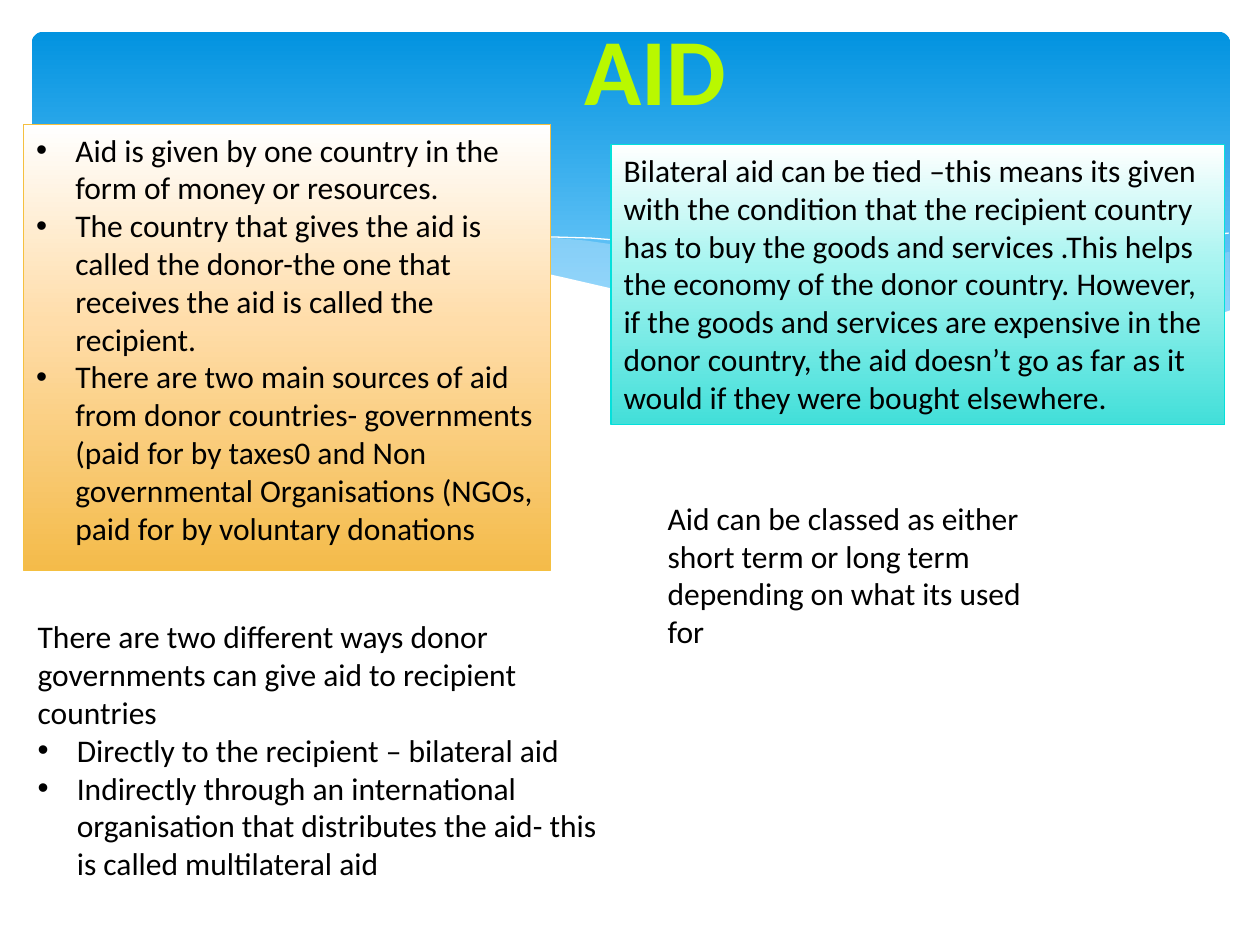
from pptx import Presentation
from pptx.dml.color import RGBColor
from pptx.enum.shapes import MSO_SHAPE
from pptx.enum.text import MSO_ANCHOR, PP_ALIGN
from pptx.oxml.ns import qn
from pptx.util import Cm, Pt
from lxml.etree import SubElement

BLACK = RGBColor(0x00, 0x00, 0x00)
WHITE = RGBColor(0xFF, 0xFF, 0xFF)
SKY = RGBColor(0x02, 0x93, 0xE0)
PALE = RGBColor(0x83, 0xD3, 0xFE)
MIST = RGBColor(0xC6, 0xE7, 0xFC)
PEACH = RGBColor(0xFF, 0xDD, 0xAA)
AMBER = RGBColor(0xF4, 0xBB, 0x4A)
GOLD = RGBColor(0xF5, 0xC0, 0x40)
MINT = RGBColor(0xA5, 0xF4, 0xF0)
AQUA = RGBColor(0x42, 0xDF, 0xD9)
TEAL = RGBColor(0x05, 0xE0, 0xDB)
MOSS = RGBColor(0x5C, 0x7B, 0x00)
LIME = RGBColor(0xB9, 0xF8, 0x00)
LEAF = RGBColor(0xAC, 0xE7, 0x00)
EDGE = RGBColor(0x80, 0xA6, 0x11)


def blend(fill, owner, stops):
    """Fill from top to bottom with (percent, colour) stops."""
    fill.gradient()
    fill.gradient_angle = 270
    row = owner.find(qn("a:gradFill")).find(qn("a:gsLst"))
    for stop in list(row):
        row.remove(stop)
    for part, tone in stops:
        stop = SubElement(row, qn("a:gs"), pos=str(part * 1000))
        SubElement(stop, qn("a:srgbClr"), val=str(tone))


def write(shape, lines, dots):
    """Write 18 pt lines; those from index dots on get bullets."""
    frame = shape.text_frame
    frame.word_wrap = True
    frame.vertical_anchor = MSO_ANCHOR.TOP
    frame.text = "\n".join(lines)
    for i, para in enumerate(frame.paragraphs):
        para.alignment = PP_ALIGN.LEFT
        font = para.runs[0].font
        font.name, font.size = "Calibri", Pt(18)
        font.color.rgb = BLACK
        if i >= dots:
            props = para._p.get_or_add_pPr()
            props.set("marL", str(Cm(0.79)))
            props.set("indent", str(-Cm(0.79)))
            SubElement(props, qn("a:buFont"), typeface="Arial")
            SubElement(props, qn("a:buChar"), char="•")


deck = Presentation()
deck.slide_width, deck.slide_height = Cm(25.4), Cm(19.05)
slide = deck.slides.add_slide(deck.slide_layouts[6])
shapes = slide.shapes

# Blue banner
banner = shapes.add_shape(MSO_SHAPE.ROUNDED_RECTANGLE,
                          Cm(0.64), Cm(0.64), Cm(24.16), Cm(6.86))
banner.adjustments[0] = 0.034
banner.shadow.inherit = False
banner.line.fill.background()
blend(banner.fill, banner._element.spPr, [(0, SKY), (90, PALE)])

# Waves in hundredths of a centimetre: fill, opacity, points
waves = [
    (MIST, 29, [
        (2477, 508), (2375, 526), (2187, 566), (1979, 615), (1793, 653),
        (1679, 673), (1791, 688), (1923, 701), (2068, 706), (2215, 696),
        (2339, 673), (2410, 653), (2479, 627), (2479, 508)]),
    (MIST, 40, [
        (2268, 693), (2126, 673), (1969, 645), (1793, 610), (1598, 564),
        (1445, 528), (1306, 503), (1181, 485), (1067, 475), (917, 470),
        (795, 478), (726, 485), (869, 505), (1026, 536), (1140, 564),
        (1346, 610), (1527, 648), (1689, 676), (1834, 696), (1994, 706),
        (2129, 706)]),
    (None, 100, [
        (785, 495), (874, 483), (1019, 475), (1191, 480), (1354, 493),
        (1544, 518), (1765, 556), (2019, 612), (2304, 691)]),
    (None, 100, [
        (1557, 653), (1765, 597), (1971, 549), (2200, 505), (2347, 483),
        (2477, 470)]),
    (WHITE, 100, [
        (2482, 625), (2388, 658), (2283, 683), (2159, 699), (2014, 701),
        (1844, 691), (1646, 665), (1471, 635), (1278, 592), (1135, 559),
        (927, 513), (742, 483), (584, 470), (450, 467), (302, 475),
        (193, 495), (102, 521), (58, 541), (58, 836), (2482, 836)]),
]
for tone, alpha, points in waves:
    pen = shapes.build_freeform(*points[0], scale=Cm(0.01))
    pen.add_line_segments(points[1:], close=tone is not None)
    wave = pen.convert_to_shape()
    wave.shadow.inherit = False
    if tone is None:
        wave.fill.background()
        wave.line.color.rgb = WHITE
        wave.line.width = Pt(0)
        continue
    wave.line.fill.background()
    wave.fill.solid()
    wave.fill.fore_color.rgb = tone
    if alpha < 100:
        paint = wave._element.spPr.find(qn("a:solidFill"))
        SubElement(paint[0], qn("a:alpha"), val=str(alpha * 1000))

# Title
title = shapes.add_textbox(Cm(11.51), Cm(0.1), Cm(3.4), Cm(2.57))
title.text_frame.word_wrap = False
para = title.text_frame.paragraphs[0]
para.text = "AID"
para.alignment = PP_ALIGN.CENTER
run = para.runs[0]
run.font.name, run.font.size, run.font.bold = "Calibri", Pt(54), True
props = run._r.get_or_add_rPr()
blend(run.font.fill, props,
      [(0, MOSS), (43, LIME), (48, LEAF), (100, MOSS)])
rim = SubElement(props, qn("a:ln"), w=str(Pt(0.71)))
paint = SubElement(rim, qn("a:solidFill"))
SubElement(paint, qn("a:srgbClr"), val=str(EDGE))
props.insert(0, rim)

# Coloured panels: place, gradient, border, first bullet, lines
panels = [
    ((0.48, 2.51, 10.62, 8.99), [(0, WHITE), (44, PEACH), (100, AMBER)],
     GOLD, 0, [
        "Aid is given by one country in the form of money or resources.",
        "The country that gives the aid is called the donor-the one that "
        "receives the aid is called the recipient.",
        "There are two main sources of aid from donor countries- "
        "governments (paid for by taxes0 and Non governmental "
        "Organisations (NGOs, paid for by voluntary donations"]),
    ((12.32, 2.92, 12.37, 5.64), [(0, WHITE), (44, MINT), (100, AQUA)],
     TEAL, 1, [
        "Bilateral aid can be tied –this means its given with the "
        "condition that the recipient country has to buy the goods and "
        "services .This helps the economy of the donor country. However, "
        "if the goods and services are expensive in the donor country, "
        "the aid doesn’t go as far as it would if they were bought "
        "elsewhere."]),
]
for place, stops, edge, dots, lines in panels:
    panel = shapes.add_shape(MSO_SHAPE.RECTANGLE, *map(Cm, place))
    panel.shadow.inherit = False
    blend(panel.fill, panel._element.spPr, stops)
    panel.line.color.rgb = edge
    panel.line.width = Pt(0.75)
    write(panel, lines, dots)

# Plain notes: place, first bullet, lines
notes = [
    ((0.51, 12.32, 11.81, 5.64), 1, [
        "There are two different ways donor governments can give aid to "
        "recipient countries",
        "Directly to the recipient – bilateral aid",
        "Indirectly through an international organisation that "
        "distributes the aid- this is called multilateral aid"]),
    ((13.21, 9.93, 7.9, 3.33), 1, [
        "Aid can be classed as either short term or long term depending "
        "on what its used for"]),
]
for place, dots, lines in notes:
    write(shapes.add_textbox(*map(Cm, place)), lines, dots)

deck.save("out.pptx")
